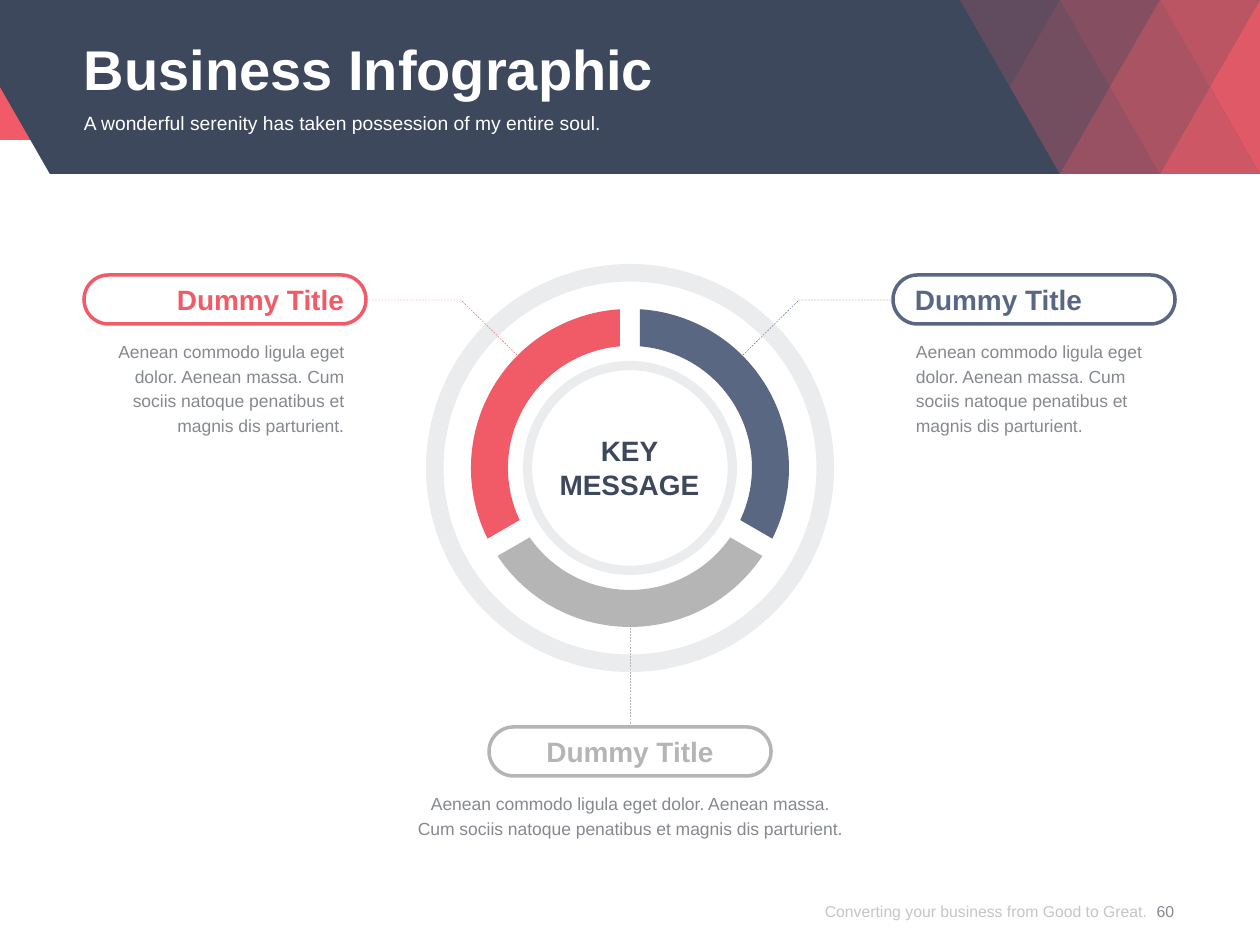
from math import asin, cos, radians, sin

from lxml.etree import SubElement
from pptx import Presentation
from pptx.dml.color import RGBColor
from pptx.enum.dml import MSO_LINE
from pptx.enum.shapes import MSO_CONNECTOR, MSO_SHAPE
from pptx.enum.text import MSO_ANCHOR as ANCHOR, MSO_AUTO_SIZE, PP_ALIGN as ALIGN
from pptx.oxml.ns import qn
from pptx.util import Emu, Pt

EMU_PER_PX = 914400 / 126
RED, BLUE, GRAY = "F15B67", "5A6783", "B5B5B5"
NAVY, TEXT_GRAY, WHITE = "3D485D", "85898F", "FFFFFF"
CENTER_X, CENTER_Y = 630, 468


def px(length):
    return Emu(round(length * EMU_PER_PX))


def color(hex_string):
    return RGBColor.from_string(hex_string)


def set_opacity(shape, percent):
    for node in shape.element.iter(qn("a:srgbClr")):
        SubElement(node, qn("a:alpha")).set("val", str(percent * 1000))


class SlideBuilder:
    font_name = "Arial"

    def __init__(self, slide):
        self.slide = slide
        self.shapes = slide.shapes

    def style(self, shape, fill=None, line=None, line_width=0.25, opacity=100):
        shape.shadow.inherit = False
        if fill:
            shape.fill.solid()
            shape.fill.fore_color.rgb = color(fill)
        else:
            shape.fill.background()
        if line:
            shape.line.color.rgb = color(line)
            shape.line.width = Pt(line_width)
        else:
            shape.line.fill.background()
        if opacity < 100:
            set_opacity(shape, opacity)
        return shape

    def preset(self, kind, box, adjustment=None, **style):
        shape = self.shapes.add_shape(kind, *map(px, box))
        if adjustment is not None:
            shape.adjustments[0] = adjustment
        return self.style(shape, **style)

    def outline(self, points, close=True, **style):
        points = [(px(x), px(y)) for x, y in points]
        builder = self.shapes.build_freeform(*points[0])
        builder.add_line_segments(points[1:], close=close)
        return self.style(builder.convert_to_shape(), **style)

    def leader(self, points, line):
        shape = self.outline(points, close=False, line=line)
        shape.line.dash_style = MSO_LINE.DASH

    def connector(self, start, target, site, line):
        x, y = map(px, start)
        connector = self.shapes.add_connector(MSO_CONNECTOR.STRAIGHT, x, y, x, y)
        connector.end_connect(target, site)
        connector.line.color.rgb = color(line)
        connector.line.width = Pt(0.25)
        connector.line.dash_style = MSO_LINE.DASH
        SubElement(connector.element.spPr, qn("a:effectLst"))

    def fill_text(self, shape, lines, size, text_color, bold=False, align=ALIGN.LEFT,
                  anchor=ANCHOR.TOP, spacing=None):
        frame = shape.text_frame
        frame.word_wrap = True
        frame.auto_size = MSO_AUTO_SIZE.NONE
        frame.vertical_anchor = anchor
        frame.margin_left = frame.margin_right = 0
        frame.margin_top = frame.margin_bottom = 0
        for index, line in enumerate(lines):
            paragraph = frame.add_paragraph() if index else frame.paragraphs[0]
            paragraph.text = line
            paragraph.alignment = align
            paragraph.space_before = Pt(0)
            if spacing:
                paragraph.line_spacing = Pt(spacing)
            font = paragraph.font
            font.name, font.size, font.bold = self.font_name, Pt(size), bold
            font.color.rgb = color(text_color)
        return shape

    def text(self, box, lines, size, text_color, **style):
        shape = self.shapes.add_textbox(*map(px, box))
        return self.fill_text(shape, lines, size, text_color, **style)

    def placeholder(self, index, box, lines, size, text_color, **style):
        shape = self.slide.placeholders[index]
        shape.left, shape.top, shape.width, shape.height = map(px, box)
        self.fill_text(shape, lines, size, text_color, **style)
        for paragraph in shape.text_frame.paragraphs:
            properties = paragraph._p.get_or_add_pPr()
            properties.set("marL", "0")
            properties.set("indent", "0")
            bullet = SubElement(properties, qn("a:buNone"))
            properties.find(qn("a:defRPr")).addprevious(bullet)
        shape.element.getparent().append(shape.element)  # bring to front


def draw_header(builder):
    builder.preset(MSO_SHAPE.RECTANGLE, (0, 0, 1260, 140), fill=RED)
    builder.outline([(0, 0), (1260, 0), (1260, 174), (50, 174), (0, 87)], fill=NAVY)

    # Translucent mesh: triangles on both edges, diamonds between them
    for left, edge, opacity in [(960, 0, 20), (1060, 0, 40), (1060, 174, 50),
                                (1160, 0, 70), (1160, 174, 80)]:
        builder.outline([(left, edge), (left + 100, edge), (left + 50, 87)],
                        fill=RED, opacity=opacity)
    for middle, opacity in [(1060, 30), (1160, 60), (1260, 90)]:
        right = min(middle + 50, 1260)
        builder.outline([(middle, 0), (right, 87), (middle, 174), (middle - 50, 87)],
                        fill=RED, opacity=opacity)

    builder.placeholder(0, (84, 24, 1092, 82), ["Business Infographic"], 32, WHITE,
                        bold=True, anchor=ANCHOR.MIDDLE, spacing=42)
    builder.placeholder(
        1, (84, 111, 1092, 49),
        ["A wonderful serenity has taken possession of my entire soul."], 11, WHITE)


def arc_points(radius, start, end, half_gap=10, steps=48):
    """Arc between two angles, trimmed so that the gaps have parallel sides."""
    trim = asin(half_gap / radius)
    first, last = radians(start) + trim, radians(end) - trim
    angles = [first + (last - first) * step / steps for step in range(steps + 1)]
    return [(CENTER_X + radius * cos(angle), CENTER_Y + radius * sin(angle))
            for angle in angles]


def draw_wheel(builder):
    for radius in (107, 204):
        box = (CENTER_X - radius, CENTER_Y - radius, 2 * radius, 2 * radius)
        builder.preset(MSO_SHAPE.DONUT, box, 0.043, fill=NAVY, opacity=10)

    builder.leader([(517, 355), (461, 300), (369, 300)], RED)
    builder.leader([(743, 355), (799, 300), (891, 300)], BLUE)

    for index, fill in enumerate((BLUE, GRAY, RED)):
        start = -90 + 120 * index
        outer = arc_points(159, start, start + 120)
        inner = arc_points(122, start, start + 120)
        builder.outline(outer + inner[::-1], fill=fill)

    builder.text((513, 434, 233, 68), ["KEY", "MESSAGE"], 16, NAVY,
                 bold=True, align=ALIGN.CENTER)


def draw_callouts(builder):
    side_text = ["Aenean commodo ligula eget dolor. Aenean massa. "
                 "Cum sociis natoque penatibus et magnis dis parturient."]
    bottom_text = ["Aenean commodo ligula eget dolor. Aenean massa.",
                   "Cum sociis natoque penatibus et magnis dis parturient."]
    # color, alignment, pill left and top, title left and width, body box and text
    callouts = [
        (RED, ALIGN.RIGHT, 84, 275, 111, 233, 101, 243, 100, side_text),
        (BLUE, ALIGN.LEFT, 893, 275, 915, 233, 916, 243, 100, side_text),
        (GRAY, ALIGN.CENTER, 489, 727, 506, 248, 407, 446, 48, bottom_text),
    ]
    for (accent, align, left, top, title_left, title_width,
         body_left, body_width, body_height, body) in callouts:
        builder.text((body_left, top + 63, body_width, body_height),
                     body, 10, TEXT_GRAY, align=align, spacing=14)
        builder.text((title_left, top + 8, title_width, 34), ["Dummy Title"],
                     16, accent, bold=True, align=align)
        pill = builder.preset(MSO_SHAPE.ROUNDED_RECTANGLE, (left, top, 282, 49), 0.5,
                              line=accent, line_width=2)
    # The last pill sits under the wheel
    builder.connector((CENTER_X, 628), pill, 0, GRAY)


def draw_footer(builder):
    slogan = builder.text((761, 877, 386, 68),
                          ["Converting your business from Good to Great."], 9, "8C8C8C",
                          align=ALIGN.RIGHT, anchor=ANCHOR.MIDDLE)
    set_opacity(slogan, 50)
    builder.text((1136, 877, 59, 68), ["60"], 9, TEXT_GRAY,
                 align=ALIGN.CENTER, anchor=ANCHOR.MIDDLE)


def main():
    presentation = Presentation()
    presentation.slide_width, presentation.slide_height = px(1260), px(945)
    builder = SlideBuilder(presentation.slides.add_slide(presentation.slide_layouts[1]))
    draw_header(builder)
    draw_wheel(builder)
    draw_callouts(builder)
    draw_footer(builder)
    presentation.save("out.pptx")


if __name__ == "__main__":
    main()
